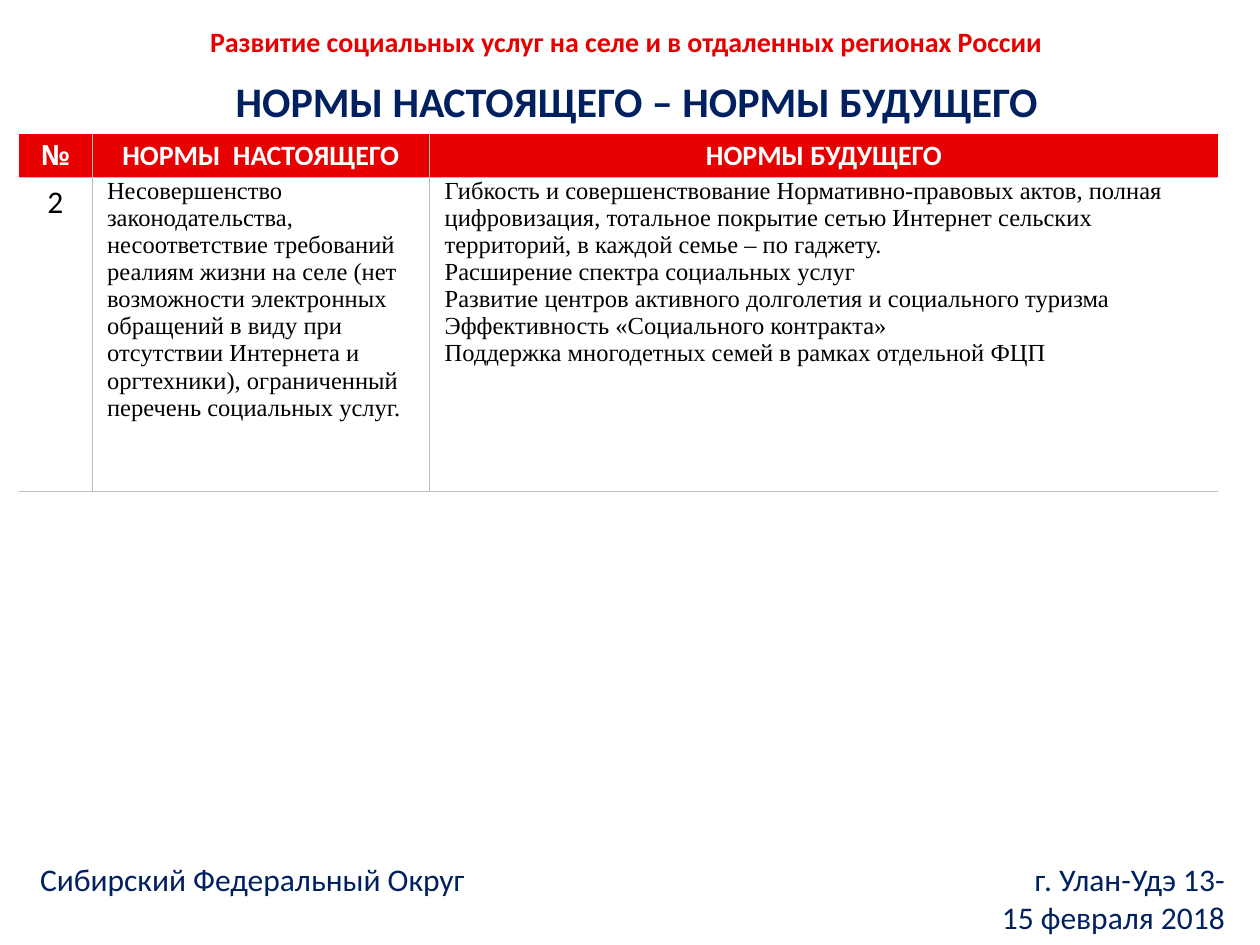
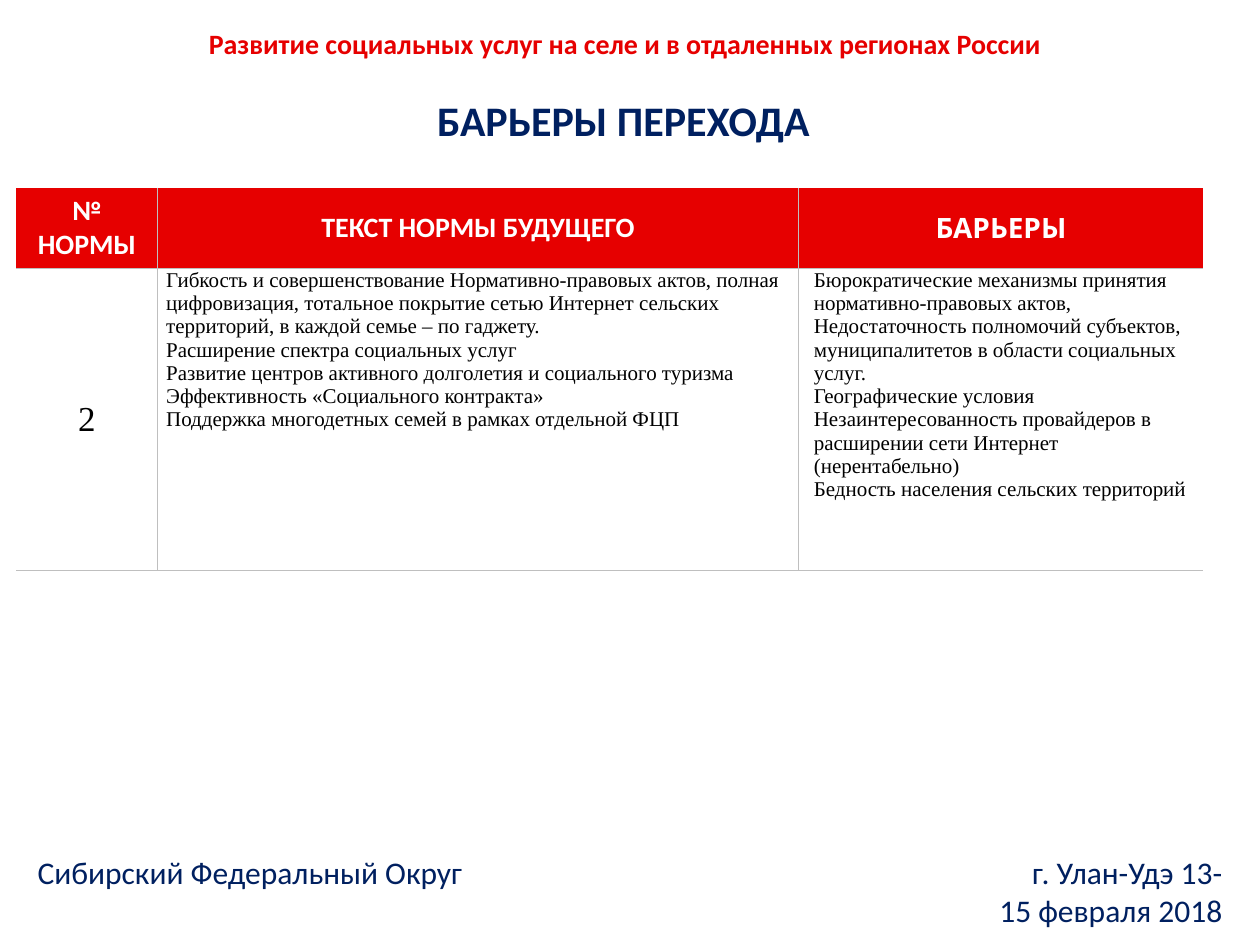
from dataclasses import dataclass

from lxml import etree
from pptx import Presentation
from pptx import util as u
from pptx.dml.color import RGBColor
from pptx.enum import text
from pptx.oxml import ns

Inches, Pt = u.Inches, u.Pt
LEFT, CENTER, RIGHT = text.PP_ALIGN.LEFT, text.PP_ALIGN.CENTER, text.PP_ALIGN.RIGHT
TOP, MIDDLE = text.MSO_ANCHOR.TOP, text.MSO_ANCHOR.MIDDLE


@dataclass(frozen=True)
class Theme:
    red: str = "E60000"
    navy: str = "002060"
    white: str = "FFFFFF"
    black: str = "000000"
    rule: str = "BFBFBF"
    sans: str = "Calibri"
    accent: str = "Cabin"
    serif: str = "Times New Roman"
    title_size: int = 24
    band_size: int = 16
    footer_size: int = 18
    norm_size: int = 14
    barrier_size: int = 12
    norm_number_size: int = 18
    barrier_number_size: int = 20
    rule_width: float = 0.5


THEME = Theme()


@dataclass(frozen=True)
class Cell:
    lines: list
    size: int
    font: str = THEME.sans
    color: str = THEME.black
    bold: bool = False
    align: int = LEFT
    anchor: int = TOP
    side: float = 0.07
    edge: float = 0
    spacing: float = 1.0
    fill: str = ""


def heading(label, font=THEME.sans):
    return Cell([label], THEME.band_size, font, THEME.white, True, CENTER, MIDDLE,
                edge=0.04, fill=THEME.red)


class Deck:
    def __init__(self, theme):
        self.theme = theme
        self.prs = Presentation()
        self.prs.slide_width, self.prs.slide_height = Inches(10), Inches(7.5)
        self.slide = None

    def new_slide(self):
        self.slide = self.prs.slides.add_slide(self.prs.slide_layouts[5])

    def set_text(self, frame, lines, size, color, font, bold=False, align=LEFT, spacing=1.0):
        frame.text = "\n".join(lines)
        for paragraph in frame.paragraphs:
            paragraph.alignment = align
            paragraph.line_spacing = spacing
            for run in paragraph.runs:
                run.font.size = Pt(size)
                run.font.name = font
                run.font.bold = bold
                run.font.color.rgb = RGBColor.from_string(color)

    def title(self, label, left, top, width):
        title = self.slide.shapes.title
        title.left, title.top = Inches(left), Inches(top)
        title.width, title.height = Inches(width), Inches(0.5)
        frame = title.text_frame
        frame.auto_size = text.MSO_AUTO_SIZE.NONE
        frame.word_wrap = False
        frame.vertical_anchor = TOP
        self.set_text(frame, [label], self.theme.title_size, self.theme.navy,
                      self.theme.sans, True)

    def textbox(self, lines, left, top, width, height, size, color,
                bold=False, align=LEFT, anchor=TOP):
        frame = self.slide.shapes.add_textbox(
            Inches(left), Inches(top), Inches(width), Inches(height)).text_frame
        frame.word_wrap = True
        frame.vertical_anchor = anchor
        self.set_text(frame, lines, size, color, self.theme.sans, bold, align)

    def programme(self, left, top):
        self.textbox(["Развитие социальных услуг на селе и в отдаленных регионах России"],
                     left, top, 8.52, 0.39, self.theme.band_size, self.theme.red,
                     True, CENTER, MIDDLE)

    def footer(self, left, top):
        style = self.theme.footer_size, self.theme.navy
        self.textbox(["Сибирский Федеральный Округ"], left, top, 4.5, 0.7, *style)
        self.textbox(["г. Улан-Удэ 13-", "15 февраля 2018"],
                     left + 7.1, top, 2.5, 0.7, *style, align=RIGHT)

    def border(self, cell, side, visible):
        line = etree.SubElement(cell._tc.get_or_add_tcPr(), ns.qn(f"a:ln{side}"))
        line.set("w", str(Pt(self.theme.rule_width)))
        if visible:
            fill = etree.SubElement(line, ns.qn("a:solidFill"))
            etree.SubElement(fill, ns.qn("a:srgbClr")).set("val", self.theme.rule)
        else:
            etree.SubElement(line, ns.qn("a:noFill"))

    def table(self, left, top, widths, heights, rows):
        table = self.slide.shapes.add_table(
            len(rows), len(widths), Inches(left), Inches(top),
            Inches(sum(widths)), Inches(sum(heights))).table
        table.first_row = table.horz_banding = False
        for column, width in zip(table.columns, widths):
            column.width = Inches(width)
        for row, height in zip(table.rows, heights):
            row.height = Inches(height)
        last = len(widths) - 1
        for r, row in enumerate(rows):
            for c, content in enumerate(row):
                cell = table.cell(r, c)
                cell.vertical_anchor = content.anchor
                cell.margin_left = cell.margin_right = Inches(content.side)
                cell.margin_top = cell.margin_bottom = Inches(content.edge)
                for side, visible in zip("LRTB", (c > 0, c < last, r > 0, True)):
                    self.border(cell, side, visible)
                if content.fill:
                    cell.fill.solid()
                    cell.fill.fore_color.rgb = RGBColor.from_string(content.fill)
                else:
                    cell.fill.background()
                self.set_text(cell.text_frame, content.lines, content.size, content.color,
                              content.font, content.bold, content.align, content.spacing)


PRESENT_NORM = [
    "Несовершенство законодательства, несоответствие требований реалиям жизни на селе "
    "(нет возможности электронных обращений в виду при отсутствии Интернета и "
    "оргтехники), ограниченный перечень социальных услуг.",
]
FUTURE_NORMS = [
    "Гибкость и совершенствование Нормативно-правовых актов, полная цифровизация, "
    "тотальное покрытие сетью Интернет сельских территорий, в каждой семье – по гаджету.",
    "Расширение спектра социальных услуг",
    "Развитие центров активного долголетия и социального туризма",
    "Эффективность «Социального контракта»",
    "Поддержка многодетных семей в рамках отдельной ФЦП",
]
BARRIERS = [
    "Бюрократические механизмы принятия нормативно-правовых актов, Недостаточность "
    "полномочий субъектов, муниципалитетов в области социальных услуг.",
    "Географические условия",
    "Незаинтересованность провайдеров в расширении сети Интернет (нерентабельно)",
    "Бедность населения сельских территорий",
]


def norms_slide(deck):
    deck.new_slide()
    deck.programme(0.71, 0.13)
    deck.title("НОРМЫ НАСТОЯЩЕГО – НОРМЫ БУДУЩЕГО", 1.77, 0.55, 6.61)
    deck.table(0.15, 1.06, [0.58, 2.68, 6.26], [0.35, 2.49], [
        [heading("№", THEME.accent), heading("НОРМЫ  НАСТОЯЩЕГО"),
         heading("НОРМЫ БУДУЩЕГО")],
        [Cell(["2"], THEME.norm_number_size, align=CENTER, spacing=1.15),
         Cell(PRESENT_NORM, THEME.norm_size, THEME.serif, side=0.12),
         Cell(FUTURE_NORMS, THEME.norm_size, THEME.serif, side=0.12)],
    ])
    deck.footer(0.22, 6.78)


def barriers_slide(deck):
    deck.new_slide()
    deck.programme(0.7, 0.15)
    deck.title("БАРЬЕРЫ ПЕРЕХОДА", 3.37, 0.7, 3.19)
    deck.table(0.13, 1.49, [1.12, 5.09, 3.21], [0.64, 2.4], [
        [heading("№ НОРМЫ"), heading("ТЕКСТ НОРМЫ БУДУЩЕГО"),
         heading("БАРЬЕРЫ", THEME.accent)],
        [Cell(["2"], THEME.barrier_number_size, THEME.serif, align=CENTER,
              anchor=MIDDLE, edge=0.04),
         Cell(FUTURE_NORMS, THEME.barrier_size, THEME.serif),
         Cell(BARRIERS, THEME.barrier_size, THEME.serif, side=0.12)],
    ])
    deck.footer(0.2, 6.72)


def main():
    deck = Deck(THEME)
    norms_slide(deck)
    barriers_slide(deck)
    deck.prs.save("out.pptx")


if __name__ == "__main__":
    main()
